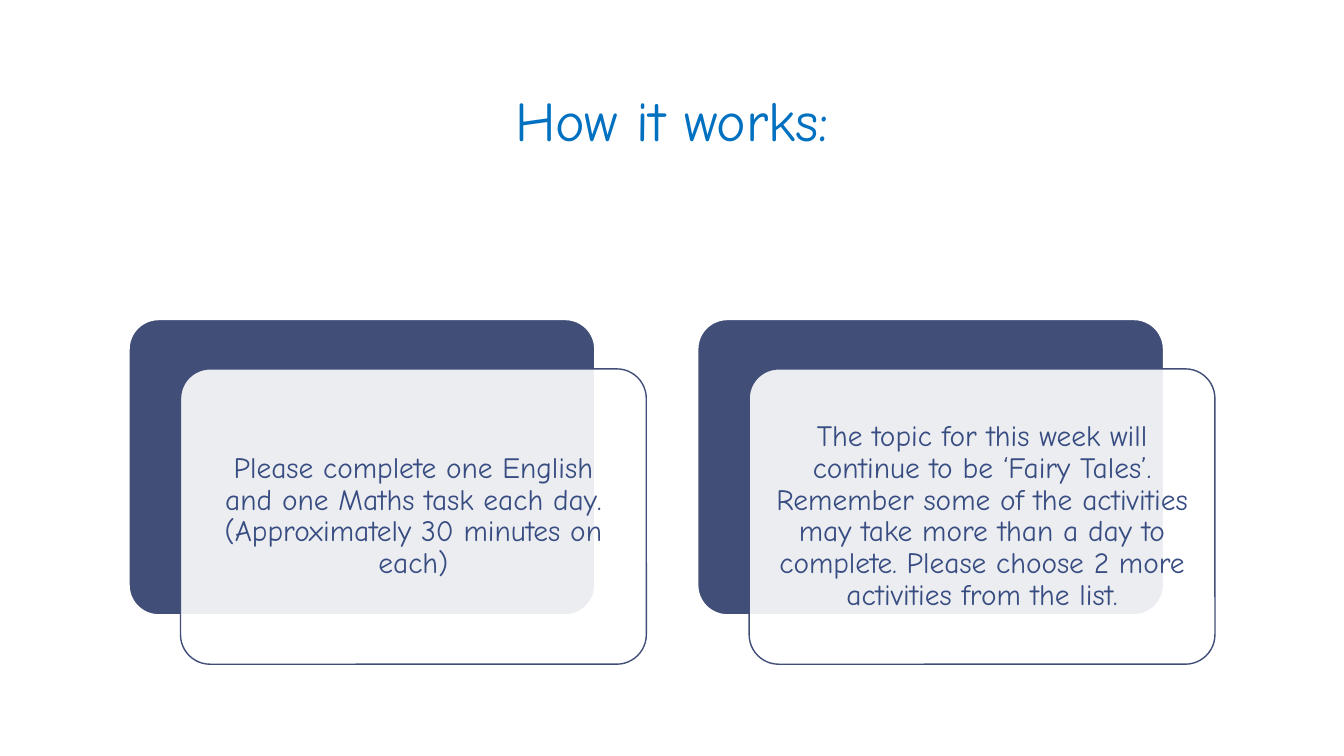
"""Build the "How it works" slide with two layered text cards."""
import dataclasses

import lxml.etree
import pptx
import pptx.dml.color
import pptx.enum.shapes
import pptx.enum.text
import pptx.oxml.ns
import pptx.shapes.autoshape
import pptx.slide
import pptx.text.text
import pptx.util

SCALE = 9144
FONT = "Comic Neue"
WHITE = pptx.dml.color.RGBColor(0xFF, 0xFF, 0xFF)
NAVY = pptx.dml.color.RGBColor(0x41, 0x4E, 0x77)
INK = pptx.dml.color.RGBColor(0x37, 0x4C, 0x81)
BLUE = pptx.dml.color.RGBColor(0x00, 0x70, 0xC0)
TOP, WIDTH, HEIGHT = 317, 462, 293
SHIFT_X, SHIFT_Y = 51, 49
INSET = 18


@dataclasses.dataclass(frozen=True)
class Card:
    """Left edge and wording of one card."""

    left: int
    text: str


CARDS = (
    Card(128, "Please complete one English and one Maths task each day. "
              "(Approximately 30 minutes on each)"),
    Card(692, "The topic for this week will continue to be ‘Fairy Tales’. "
              "Remember some of the activities may take more than a day to complete. "
              "Please choose 2 more activities from the list."),
)


def px(count: int) -> pptx.util.Emu:
    """Turn px into EMU."""
    return pptx.util.Emu(count * SCALE)


def write(frame: pptx.text.text.TextFrame, text: str, size: int,
          color: pptx.dml.color.RGBColor, spacing: float) -> None:
    """Fill a frame with one centred paragraph."""
    frame.word_wrap = True
    line = frame.paragraphs[0]
    line.text = text
    line.alignment = pptx.enum.text.PP_ALIGN.CENTER
    line.line_spacing = spacing
    line.font.name = FONT
    line.font.size = pptx.util.Pt(size)
    line.font.color.rgb = color


def panel(slide: pptx.slide.Slide, left: int, top: int,
          fill: pptx.dml.color.RGBColor,
          edge: pptx.dml.color.RGBColor) -> pptx.shapes.autoshape.Shape:
    """Draw one rounded panel."""
    shape = slide.shapes.add_shape(
        pptx.enum.shapes.MSO_SHAPE.ROUNDED_RECTANGLE,
        px(left), px(top), px(WIDTH), px(HEIGHT))
    shape.adjustments[0] = 0.1
    shape.shadow.inherit = False
    shape.fill.solid()
    shape.fill.fore_color.rgb = fill
    shape.line.color.rgb = edge
    shape.line.width = pptx.util.Pt(1)
    return shape


def fade(shape: pptx.shapes.autoshape.Shape, percent: int) -> None:
    """Set the opacity of a solid fill."""
    name = pptx.oxml.ns.qn
    color = shape.fill._xPr.find(name("a:solidFill")).find(name("a:srgbClr"))
    lxml.etree.SubElement(color, name("a:alpha"), val=str(percent * 1000))


def draw(slide: pptx.slide.Slide, card: Card) -> None:
    """Draw a back panel and the text panel over it."""
    panel(slide, card.left, TOP, NAVY, WHITE)
    front = panel(slide, card.left + SHIFT_X, TOP + SHIFT_Y, WHITE, NAVY)
    fade(front, 90)
    frame = front.text_frame
    frame.vertical_anchor = pptx.enum.text.MSO_ANCHOR.MIDDLE
    frame.margin_left = frame.margin_right = px(INSET)
    frame.margin_top = frame.margin_bottom = px(INSET)
    write(frame, card.text, 21, INK, 0.9)


def main() -> None:
    """Build and save the slide."""
    deck = pptx.Presentation()
    deck.slide_width, deck.slide_height = px(1333), px(750)
    slide = deck.slides.add_slide(deck.slide_layouts[6])
    title = slide.shapes.add_textbox(px(129), px(90), px(1075), px(145))
    write(title.text_frame, "How it works:", 40, BLUE, 0.85)
    for card in CARDS:
        draw(slide, card)
    deck.save("out.pptx")


if __name__ == "__main__":
    main()
